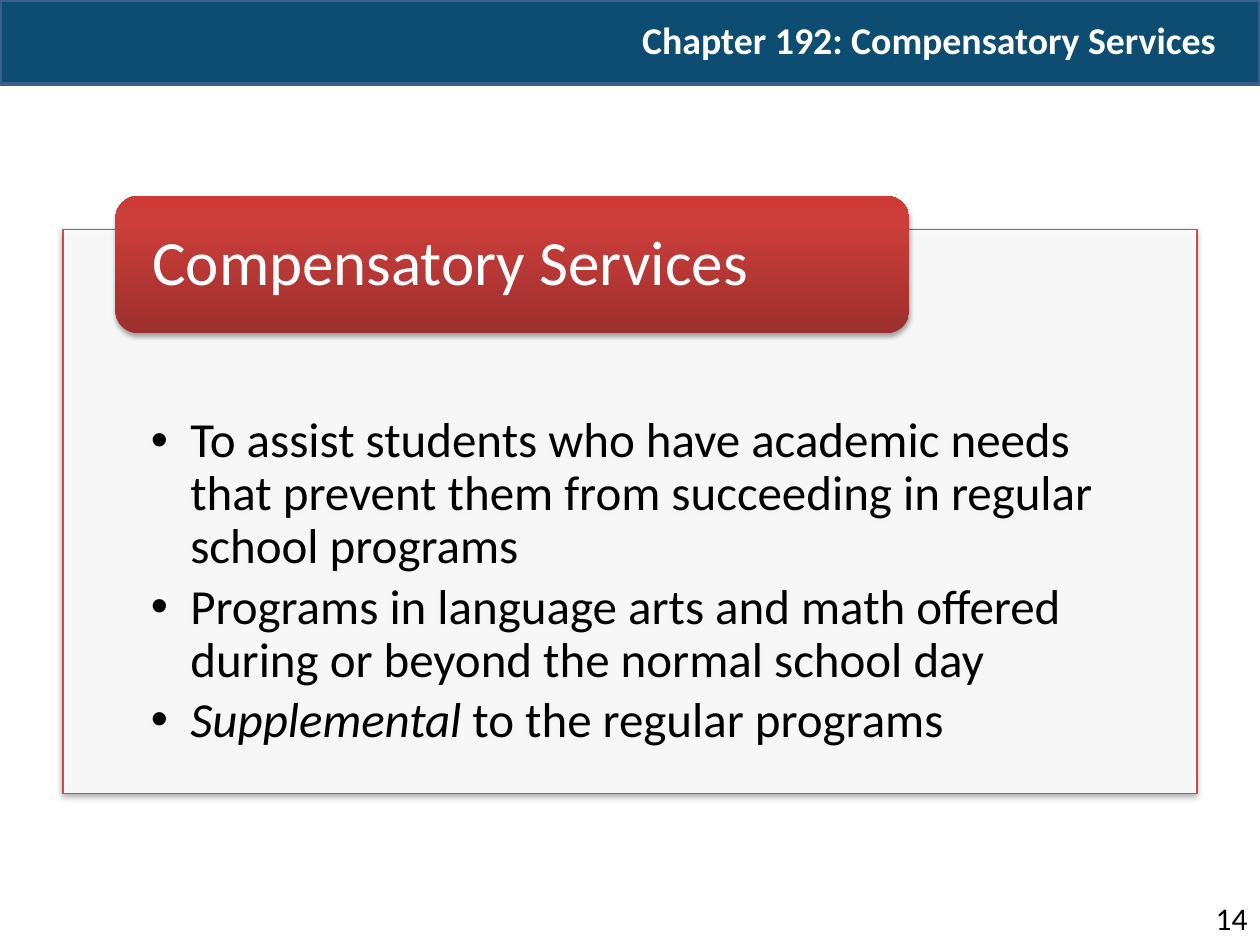
from copy import deepcopy

from lxml import etree
from pptx import Presentation
from pptx import util as u
from pptx.dml import color
from pptx.enum import shapes, text
from pptx.oxml import ns

BULLETS = [
    [("To assist students who have academic needs that prevent them "
      "from succeeding in regular school programs", False)],
    [("Programs in language arts and math offered during or beyond "
      "the normal school day", False)],
    [("Supplemental", True), (" to the regular programs", False)],
]


def rgb(value):
    """Return the colour for a hex string."""
    return color.RGBColor.from_string(value)


def add_child(parent, tag, **attributes):
    """Append a DrawingML element with the given attributes."""
    values = {name: str(value) for name, value in attributes.items()}
    return etree.SubElement(parent, ns.qn(tag), values)


def add_block(page, kind, left, top, width, height, fill, line=None, weight=0):
    """Add a filled preset shape without a shadow."""
    block = page.shapes.add_shape(
        kind, u.Pt(left), u.Pt(top), u.Pt(width), u.Pt(height))
    block.shadow.inherit = False
    block.fill.solid()
    block.fill.fore_color.rgb = rgb(fill)
    if line:
        block.line.color.rgb = rgb(line)
        block.line.width = u.Pt(weight)
    else:
        block.line.fill.background()
    return block


def add_shadow(block):
    """Give a block a soft shadow straight below it."""
    effects = block._element.spPr.find(ns.qn("a:effectLst"))
    shadow = add_child(effects, "a:outerShdw", blurRad=u.Pt(3.1),
                       dist=u.Pt(1.8), dir=5400000, rotWithShape=0)
    tint = add_child(shadow, "a:srgbClr", val="000000")
    add_child(tint, "a:alpha", val=35000)


def set_opacity(block, percent):
    """Make the solid fill of a block partly transparent."""
    fill = block._element.spPr.find(ns.qn("a:solidFill"))
    add_child(fill[0], "a:alpha", val=percent * 1000)


def set_gradient(block, stops):
    """Fill a block with a gradient that runs upwards."""
    block.fill.gradient()
    block.fill.gradient_angle = 90
    stop_list = block._element.spPr.find(ns.qn("a:gradFill")).find(ns.qn("a:gsLst"))
    while len(stop_list) < len(stops):
        stop_list.append(deepcopy(stop_list[0]))
    for stop, (position, value) in zip(block.fill.gradient_stops, stops):
        stop.position = position
        stop.color.rgb = rgb(value)


def set_frame(box, anchor, insets):
    """Set wrapping, anchor and left, top, right, bottom insets of a box."""
    frame = box.text_frame
    frame.word_wrap = True
    frame.vertical_anchor = anchor
    (frame.margin_left, frame.margin_top,
     frame.margin_right, frame.margin_bottom) = [u.Pt(inset) for inset in insets]
    return frame


def style_paragraph(para, size, value, align, bold=False):
    """Set alignment and font of a paragraph."""
    para.alignment = align
    font = para.font
    font.name, font.size, font.bold = "Calibri", u.Pt(size), bold
    font.color.rgb = rgb(value)


def add_label(page, left, top, width, height, words, size, value, align,
              anchor, bold=False):
    """Add a text box with one line."""
    box = page.shapes.add_textbox(u.Pt(left), u.Pt(top), u.Pt(width), u.Pt(height))
    frame = set_frame(box, anchor, (7.2, 3.6, 7.2, 3.6))
    frame.text = words
    style_paragraph(frame.paragraphs[0], size, value, align, bold)


def add_bullets(frame, items):
    """Write bulleted paragraphs made of plain and italic spans."""
    for index, spans in enumerate(items):
        para = frame.add_paragraph() if index else frame.paragraphs[0]
        properties = para._p.get_or_add_pPr()
        properties.set("marL", str(u.Pt(22.5)))
        properties.set("indent", str(u.Pt(-22.5)))
        add_child(properties, "a:buFont", typeface="Arial")
        add_child(properties, "a:buChar", char="•")
        style_paragraph(para, 28, "000000", text.PP_ALIGN.LEFT)
        para.line_spacing = 0.9
        para.space_after = u.Pt(4.2)
        for words, italic in spans:
            span = para.add_run()
            span.text = words
            span.font.italic = italic


def add_panel(page):
    """Add the framed panel with the bullet list."""
    panel = add_block(page, shapes.MSO_SHAPE.RECTANGLE, 36, 131, 648, 322.5,
                      "FFFFFF", "C0504D", 0.75)
    set_opacity(panel, 90)
    add_shadow(panel)
    frame = set_frame(panel, text.MSO_ANCHOR.TOP, (50.3, 106.5, 50.3, 16))
    add_bullets(frame, BULLETS)


def add_heading(page):
    """Add the rounded red heading over the panel."""
    heading = add_block(page, shapes.MSO_SHAPE.ROUNDED_RECTANGLE,
                        66, 112, 453.6, 78.5, "CB3E3A")
    set_gradient(heading, [(0, "9C2F2D"), (0.8, "CB3E3A"), (1, "CE3B37")])
    add_shadow(heading)
    frame = set_frame(heading, text.MSO_ANCHOR.MIDDLE, (17.2, 0, 17.2, 0))
    frame.text = "Compensatory Services"
    para = frame.paragraphs[0]
    style_paragraph(para, 36, "FFFFFF", text.PP_ALIGN.LEFT)
    para.line_spacing = 0.9


def main():
    """Build the slide and save it."""
    deck = Presentation()
    deck.slide_width, deck.slide_height = u.Pt(720), u.Pt(540)
    page = deck.slides.add_slide(deck.slide_layouts[6])
    add_block(page, shapes.MSO_SHAPE.RECTANGLE, 0, 0, 720, 48,
              "0E4D72", "3A5F8C", 2)
    add_label(page, 672, 510, 48, 29, "14", 18, "000000",
              text.PP_ALIGN.RIGHT, text.MSO_ANCHOR.TOP)
    add_label(page, 342, 0, 378, 45, "Chapter 192: Compensatory Services",
              21.6, "FFFFFF", text.PP_ALIGN.CENTER, text.MSO_ANCHOR.MIDDLE, True)
    add_panel(page)
    add_heading(page)
    deck.save("out.pptx")


if __name__ == "__main__":
    main()
